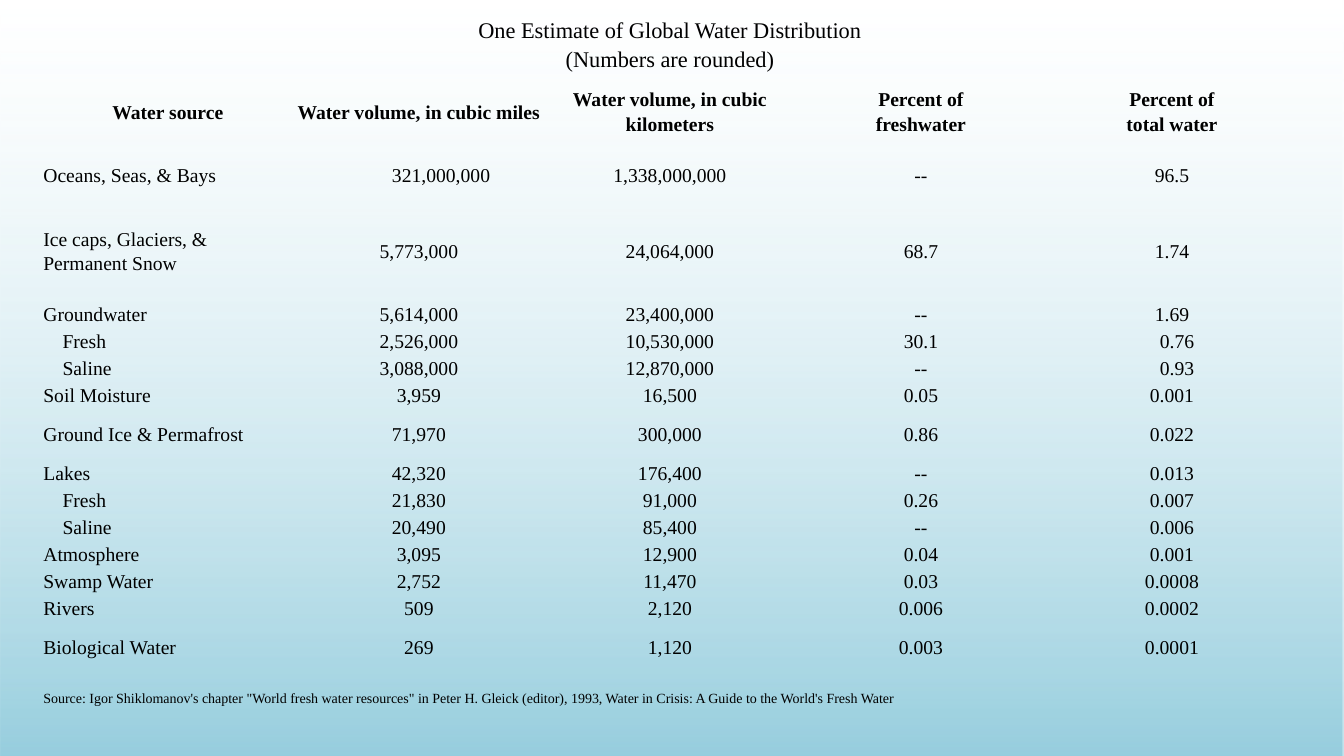
from copy import deepcopy
from dataclasses import dataclass

from lxml.etree import SubElement
from pptx import Presentation
from pptx.dml.color import RGBColor
from pptx.enum.shapes import MSO_SHAPE as Shape
from pptx.enum.text import MSO_ANCHOR as Anchor, PP_ALIGN as Align
from pptx.oxml.ns import qn
from pptx.util import Inches, Pt


@dataclass(frozen=True)
class Theme:
    font: str = "Times New Roman"
    ink: RGBColor = RGBColor.from_string("000000")
    deep_water: RGBColor = RGBColor.from_string("7DC2D6")
    pale_water: RGBColor = RGBColor.from_string("D4EBF1")
    title: int = 16
    body: int = 14
    source: int = 10


THEME = Theme()
NO_GRID_STYLE = "{2D5ABB26-0587-4C30-8999-92F81FD0307C}"
SLIDE_WIDTH, SLIDE_HEIGHT = 13.33, 7.5
COLUMN_WIDTH = 2.49
CELL_MARGIN = 0.01
TIGHT, TALL, HEADING, DOUBLE = 0.26, 0.51, 0.75, 0.99

TITLE = "One Estimate of Global Water Distribution\v(Numbers are rounded)"
HEADINGS = (
    "Water source",
    "Water volume, in cubic miles",
    "Water volume, in cubic kilometers",
    "Percent of\vfreshwater",
    "Percent of\vtotal water",
)
WATER_SOURCES = (
    (TALL, "Oceans, Seas, & Bays", "321,000,000", "1,338,000,000", "--", "96.5"),
    (DOUBLE, "Ice caps, Glaciers, & Permanent Snow", "5,773,000", "24,064,000", "68.7", "1.74"),
    (TIGHT, "Groundwater", "5,614,000", "23,400,000", "--", "1.69"),
    (TIGHT, "Fresh", "2,526,000", "10,530,000", "30.1", "0.76"),
    (TIGHT, "Saline", "3,088,000", "12,870,000", "--", "0.93"),
    (TIGHT, "Soil Moisture", "3,959", "16,500", "0.05", "0.001"),
    (TALL, "Ground Ice & Permafrost", "71,970", "300,000", "0.86", "0.022"),
    (TIGHT, "Lakes", "42,320", "176,400", "--", "0.013"),
    (TIGHT, "Fresh", "21,830", "91,000", "0.26", "0.007"),
    (TIGHT, "Saline", "20,490", "85,400", "--", "0.006"),
    (TIGHT, "Atmosphere", "3,095", "12,900", "0.04", "0.001"),
    (TIGHT, "Swamp Water", "2,752", "11,470", "0.03", "0.0008"),
    (TIGHT, "Rivers", "509", "2,120", "0.006", "0.0002"),
    (TALL, "Biological Water", "269", "1,120", "0.003", "0.0001"),
)
SOURCE = (
    'Source: Igor Shiklomanov\'s chapter "World fresh water resources" in Peter H. Gleick '
    "(editor), 1993, Water in Crisis: A Guide to the World's Fresh Water"
)
INDENTS = {"Fresh": 0.19, "Saline": 0.19, "321,000,000": 0.44, "0.76": 0.1, "0.93": 0.1}


def apply_format(target, values):
    for name, value in values.items():
        setattr(target, name, value)


def add_water_gradient(slide):
    water = slide.shapes.add_shape(
        Shape.RECTANGLE, 0, 0, Inches(SLIDE_WIDTH), Inches(SLIDE_HEIGHT)
    )
    water.shadow.inherit = False
    water.line.fill.background()
    water.fill.gradient()
    water.fill.gradient_angle = 90
    shades = ((0, THEME.deep_water), (0.99, THEME.pale_water))
    for stop, (position, shade) in zip(water.fill.gradient_stops, shades):
        stop.position = position
        stop.color.rgb = shade
    opacities = ("80000", "0")
    for shade, opacity in zip(water._element.iter(qn("a:srgbClr")), opacities):
        SubElement(shade, qn("a:alpha")).set("val", opacity)


def write_cell(cell, text, size=THEME.body, bold=False, align=Align.CENTER):
    margin = Inches(CELL_MARGIN)
    apply_format(cell, {
        "margin_left": Inches(CELL_MARGIN + INDENTS.get(text, 0)),
        "margin_right": margin,
        "margin_top": margin,
        "margin_bottom": margin,
        "vertical_anchor": Anchor.MIDDLE,
    })
    cell.fill.background()
    paragraph = cell.text_frame.paragraphs[0]
    paragraph.text = text
    apply_format(paragraph, {"alignment": align, "line_spacing": 1.15})
    for run in paragraph.runs:
        apply_format(run.font, {"name": THEME.font, "size": Pt(size), "bold": bold})
        run.font.color.rgb = THEME.ink
    for line_break in paragraph._p.findall(qn("a:br")):
        line_break.append(deepcopy(paragraph.runs[0]._r.rPr))


def write_spanning_row(table, row, text, **style):
    first = table.cell(row, 0)
    first.merge(table.cell(row, len(HEADINGS) - 1))
    write_cell(first, text, **style)


def add_water_table(slide):
    heights = [TALL, HEADING, *(entry[0] for entry in WATER_SOURCES), TALL]
    frame = slide.shapes.add_table(
        len(heights), len(HEADINGS), Inches(0.42), Inches(0.14),
        Inches(COLUMN_WIDTH * len(HEADINGS)), Inches(sum(heights)),
    )
    table = frame.table
    apply_format(table, {"first_row": False, "horz_banding": False})
    table._tbl.tblPr.find(qn("a:tableStyleId")).text = NO_GRID_STYLE
    for column in table.columns:
        column.width = Inches(COLUMN_WIDTH)
    for row, height in zip(table.rows, heights):
        row.height = Inches(height)

    write_spanning_row(table, 0, TITLE, size=THEME.title)
    for column, heading in enumerate(HEADINGS):
        write_cell(table.cell(1, column), heading, bold=True)
    for row, (_, *values) in enumerate(WATER_SOURCES, start=2):
        for column, value in enumerate(values):
            align = Align.CENTER if column else Align.LEFT
            write_cell(table.cell(row, column), value, align=align)
    write_spanning_row(
        table, len(heights) - 1, SOURCE, size=THEME.source, align=Align.LEFT
    )


def main():
    deck = Presentation()
    deck.slide_width = Inches(SLIDE_WIDTH)
    deck.slide_height = Inches(SLIDE_HEIGHT)
    slide = deck.slides.add_slide(deck.slide_layouts[6])
    add_water_gradient(slide)
    add_water_table(slide)
    deck.save("out.pptx")


if __name__ == "__main__":
    main()
